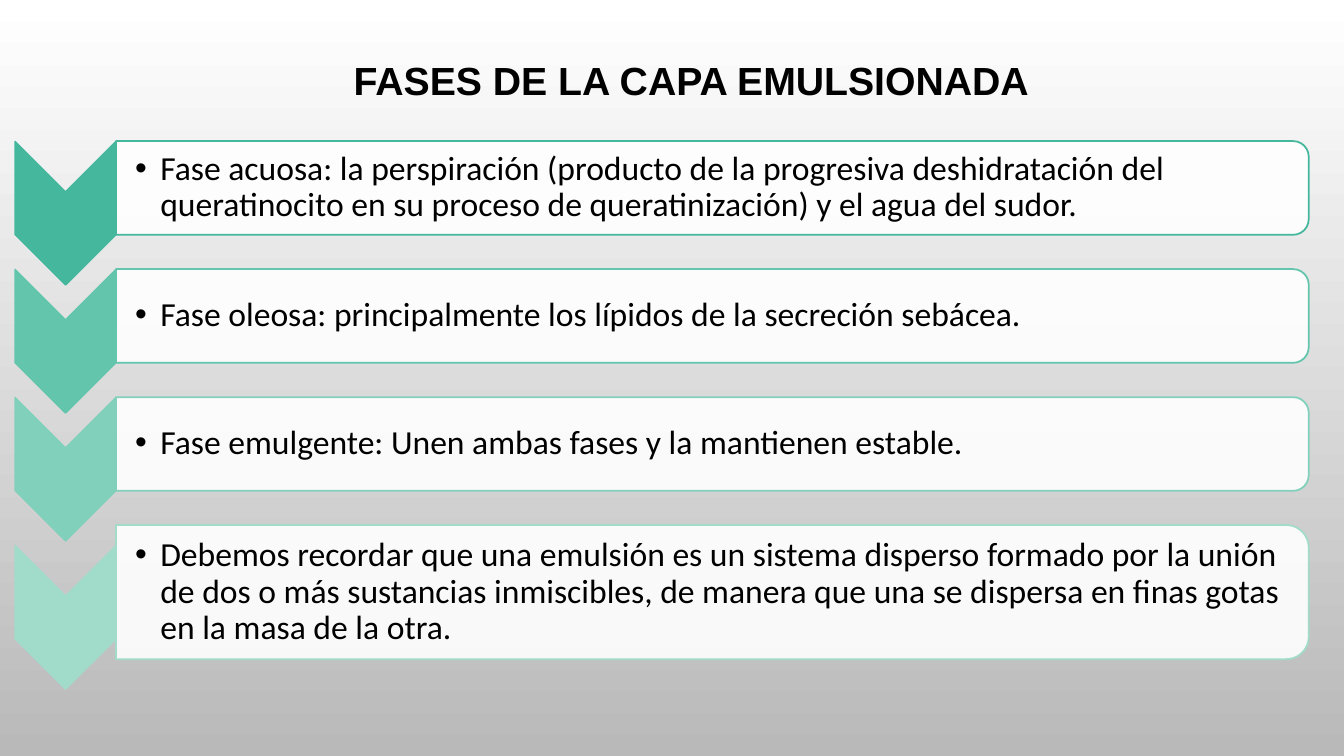
from lxml import etree
from pptx import Presentation
from pptx.dml.color import RGBColor
from pptx.enum.shapes import MSO_SHAPE
from pptx.enum.text import MSO_ANCHOR, PP_ALIGN
from pptx.oxml.ns import qn
from pptx.util import Emu, Pt

CHEVRON = MSO_SHAPE.CHEVRON
CARD = MSO_SHAPE.ROUND_2_SAME_RECTANGLE
MIDDLE = MSO_ANCHOR.MIDDLE
CENTER = PP_ALIGN.CENTER
LEFT = PP_ALIGN.LEFT

PHASES = [
    ("44B79D", 93, "Fase acuosa: la perspiración (producto de la progresiva "
     "deshidratación del queratinocito en su proceso de queratinización) "
     "y el agua del sudor."),
    ("62C5AC", 93, "Fase oleosa: principalmente los lípidos de la secreción "
     "sebácea."),
    ("81D0BB", 93, "Fase emulgente: Unen ambas fases y la mantienen estable."),
    ("A1DCCB", 133, "Debemos recordar que una emulsión es un sistema disperso "
     "formado por la unión de dos o más sustancias inmiscibles, de manera que "
     "una se dispersa en finas gotas en la masa de la otra."),
]
FIRST_TOP, GAP = 140, 34
CARD_LEFT, CARD_WIDTH = 115, 1183
CHEVRON_CENTER, CHEVRON_DROP = 65, 25


def px(n):
    """Convert px, at 100 to the inch, into EMU."""
    return Emu(int(n * 9144))


def rgb(value):
    return RGBColor.from_string(value)


class SlideBuilder:
    def __init__(self, prs, font, text_color):
        self.s = prs.slides.add_slide(prs.slide_layouts[6])
        self.font = font
        self.text_color = text_color

    def background(self, top, bottom):
        fill = self.s.background.fill
        fill.gradient()
        fill.gradient_angle = 270
        for stop, color, position in zip(fill.gradient_stops, (top, bottom), (0, 1)):
            stop.color.rgb = rgb(color)
            stop.position = position

    def turned_shape(self, kind, cx, cy, length, breadth, fill, line, alpha=100):
        """Add a shape centred at cx, cy and turned 90 degrees clockwise."""
        sp = self.s.shapes.add_shape(kind, px(cx - length / 2), px(cy - breadth / 2),
                                     px(length), px(breadth))
        sp.rotation = 90
        sp.shadow.inherit = False
        sp.fill.solid()
        sp.fill.fore_color.rgb = rgb(fill)
        if alpha < 100:
            color = sp.fill._xPr.find(".//" + qn("a:srgbClr"))
            etree.SubElement(color, qn("a:alpha"), val=str(alpha * 1000))
        sp.line.color.rgb = rgb(line)
        sp.line.width = Pt(1.25)

    def text(self, x, y, w, h, words, size, font=None, bold=False, align=LEFT,
             margins=(10, 5, 10, 5), bullet=False):
        tf = self.s.shapes.add_textbox(px(x), px(y), px(w), px(h)).text_frame
        tf.word_wrap = True
        tf.vertical_anchor = MIDDLE
        (tf.margin_left, tf.margin_top,
         tf.margin_right, tf.margin_bottom) = map(px, margins)
        p = tf.paragraphs[0]
        p.alignment = align
        p.line_spacing = 0.9
        if bullet:
            pPr = p._p.get_or_add_pPr()
            pPr.set("marL", str(px(25)))
            pPr.set("indent", str(-px(25)))
            etree.SubElement(pPr, qn("a:buFont"), typeface="Arial")
            etree.SubElement(pPr, qn("a:buChar"), char="•")
        r = p.add_run()
        r.text = words
        r.font.name = font or self.font
        r.font.size = Pt(size)
        r.font.bold = bold
        r.font.color.rgb = rgb(self.text_color)

    def phase(self, top, height, color, words):
        middle = top + height / 2
        self.turned_shape(CHEVRON, CHEVRON_CENTER, middle + CHEVRON_DROP,
                          142, 100, color, color)
        self.turned_shape(CARD, CARD_LEFT + CARD_WIDTH / 2, middle,
                          height, CARD_WIDTH, "FFFFFF", color, alpha=90)
        self.text(CARD_LEFT, top + 5, CARD_WIDTH - 4, height - 10, words, 24,
                  margins=(19, 2, 2, 2), bullet=True)


def main():
    prs = Presentation()
    prs.slide_width, prs.slide_height = px(1333), px(750)
    slide = SlideBuilder(prs, "Calibri", "000000")
    slide.background("FFFFFF", "B9B9B9")
    slide.text(144, 40, 1083, 84, "FASES DE LA CAPA EMULSIONADA", 28,
               font="Arial", bold=True, align=CENTER)
    top = FIRST_TOP
    for color, height, words in PHASES:
        slide.phase(top, height, color, words)
        top += height + GAP
    prs.save("out.pptx")


if __name__ == "__main__":
    main()
